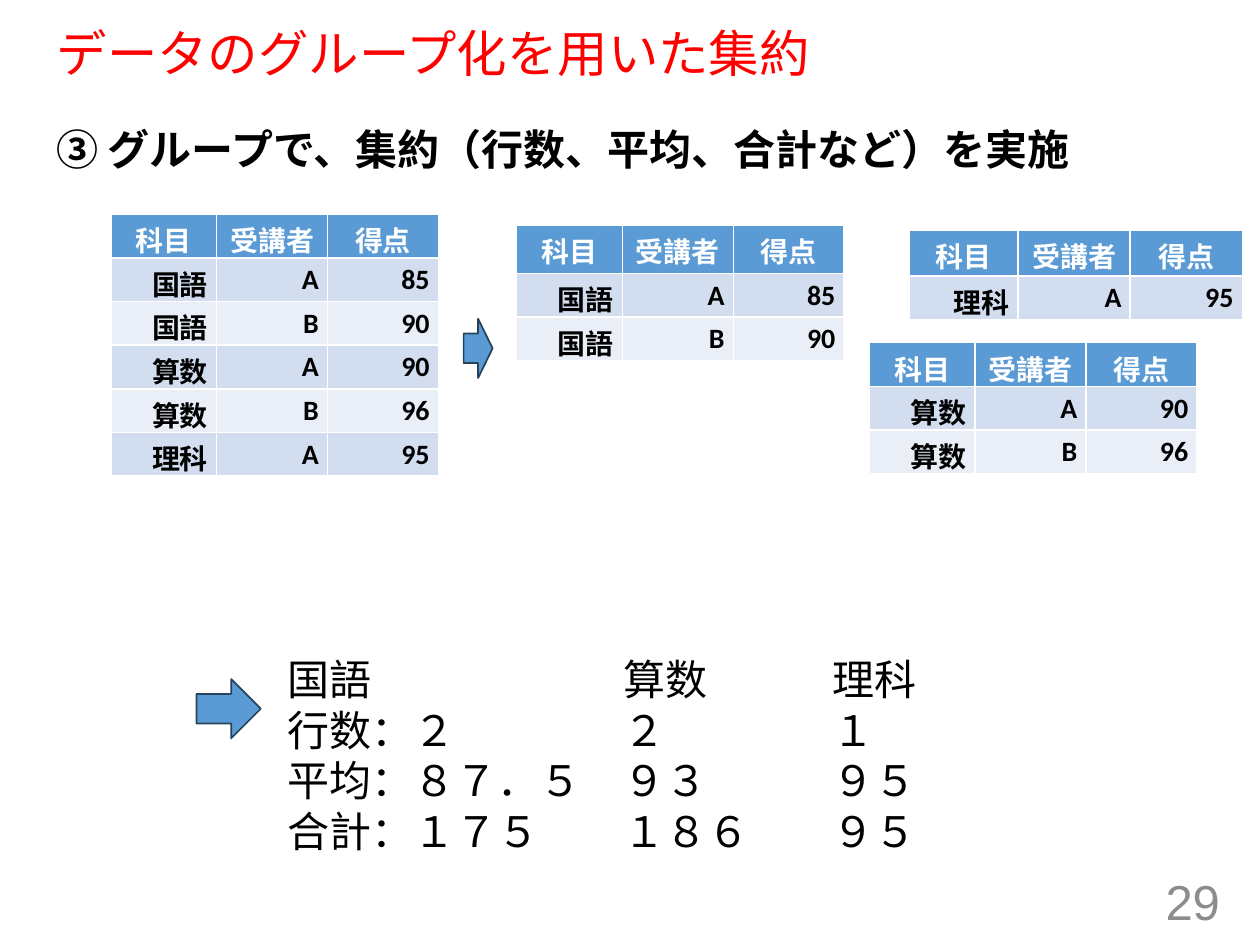
import pptx
import pptx.dml.color
import pptx.enum.shapes
import pptx.enum.text
import pptx.util
import lxml.etree

PX = 9144  # EMU per px, 100 px to the inch
COLORS = {
    "title": "FF0000", "text": "000000", "page": "8C8C8C", "head": "FFFFFF",
    "blue": "5B9BD5", "edge": "28445D", "odd": "D2DEEF", "even": "EAEFF7",
}
HEADS = ("科目", "受講者", "得点")
SCORES = [
    ("国語", "A", 85), ("国語", "B", 90),
    ("算数", "A", 90), ("算数", "B", 96),
    ("理科", "A", 95),
]
SUMS = [
    "国語\t算数\t理科",
    "行数：２\t２\t１",
    "平均：８７．５\t９３\t９５",
    "合計：１７５\t１８６\t９５",
]
SUM_TABS = (267, 433)
ALIGN = pptx.enum.text.PP_ALIGN
ANCHOR = pptx.enum.text.MSO_ANCHOR


def px(*sizes):
    return [pptx.util.Emu(size * PX) for size in sizes]


def color(name):
    return pptx.dml.color.RGBColor.from_string(COLORS[name])


def style(frame, size, font, tint, bold=False, align=ALIGN.LEFT):
    for para in frame.paragraphs:
        para.alignment = align
        for run in para.runs:
            run.font.size = pptx.util.Pt(size)
            run.font.name = font
            run.font.bold = bold
            run.font.color.rgb = color(tint)


def set_title(slide, text):
    title = slide.shapes.title
    title.left, title.top, title.width, title.height = px(35, 19, 925, 51)
    frame = title.text_frame
    frame.text = text
    frame.vertical_anchor = ANCHOR.MIDDLE
    frame.paragraphs[0].line_spacing = 0.9
    style(frame, 28.8, "Arial", "title")


def add_text(slide, box, text, *look, **more):
    frame = slide.shapes.add_textbox(*px(*box)).text_frame
    frame.word_wrap = True
    frame.text = text
    style(frame, *look, **more)
    return frame


def add_tabs(para, stops):
    """Set left tab stops, in px from the text edge."""
    props = para._p.get_or_add_pPr()
    space = "{http://schemas.openxmlformats.org/drawingml/2006/main}"
    tabs = lxml.etree.SubElement(props, space + "tabLst")
    for stop in stops:
        lxml.etree.SubElement(tabs, space + "tab", pos=str(stop * PX), algn="l")


def add_arrow(slide, *box):
    kind = pptx.enum.shapes.MSO_SHAPE.RIGHT_ARROW
    arrow = slide.shapes.add_shape(kind, *px(*box))
    arrow.shadow.inherit = False
    arrow.fill.solid()
    arrow.fill.fore_color.rgb = color("blue")
    arrow.line.color.rgb = color("edge")
    arrow.line.width = pptx.util.Pt(1)


def fill_cell(cell, text, fill, tint, align):
    cell.fill.solid()
    cell.fill.fore_color.rgb = color(fill)
    cell.margin_left, cell.margin_right = px(7, 7)
    cell.margin_top, cell.margin_bottom = px(4, 4)
    cell.text_frame.text = str(text)
    style(cell.text_frame, 16, "Calibri", tint, True, align)


def add_scores(slide, left, top, widths, head, body, scores):
    """Add a score table; head and body are row heights."""
    heights = [head] + [body] * len(scores)
    box = px(left, top, sum(widths), sum(heights))
    table = slide.shapes.add_table(len(heights), len(widths), *box).table
    for column, width in zip(table.columns, px(*widths)):
        column.width = width
    for row, height in zip(table.rows, px(*heights)):
        row.height = height
    for r, values in enumerate([HEADS] + scores):
        if r == 0:
            look = ("blue", "head", ALIGN.CENTER)
        else:
            look = ("odd" if r % 2 else "even", "text", ALIGN.RIGHT)
        for c, value in enumerate(values):
            fill_cell(table.cell(r, c), value, *look)


def main():
    deck = pptx.Presentation()
    deck.slide_width, deck.slide_height = px(1000, 750)
    slide = deck.slides.add_slide(deck.slide_layouts[5])

    set_title(slide, "データのグループ化を用いた集約")
    step = add_text(slide, (35, 93, 903, 657),
                    "③ グループで、集約（行数、平均、合計など）を実施",
                    24, "Arial", "text", bold=True)
    step.paragraphs[0].space_before = pptx.util.Pt(10)
    page = add_text(slide, (753, 695, 225, 40), "29",
                    28, "Arial", "page", align=ALIGN.RIGHT)
    page.vertical_anchor = ANCHOR.MIDDLE

    add_arrow(slide, 156, 539, 51, 47)
    sums = add_text(slide, (218, 514, 585, 172), "\n".join(SUMS),
                    24, "Calibri", "text")
    sums.auto_size = pptx.enum.text.MSO_AUTO_SIZE.SHAPE_TO_FIT_TEXT
    for para in sums.paragraphs:
        add_tabs(para, SUM_TABS)

    widths = (84, 88, 88)
    groups = {name: [s for s in SCORES if s[0] == name]
              for name in ("国語", "算数", "理科")}
    add_scores(slide, 88, 170, widths, 30, 30, SCORES)
    add_arrow(slide, 368, 253, 23, 47)
    add_scores(slide, 410, 179, widths, 38, 24, groups["国語"])
    add_scores(slide, 722, 183, (86, 89, 89), 36, 23, groups["理科"])
    add_scores(slide, 690, 272, widths, 32, 30, groups["算数"])

    deck.save("out.pptx")


if __name__ == "__main__":
    main()
